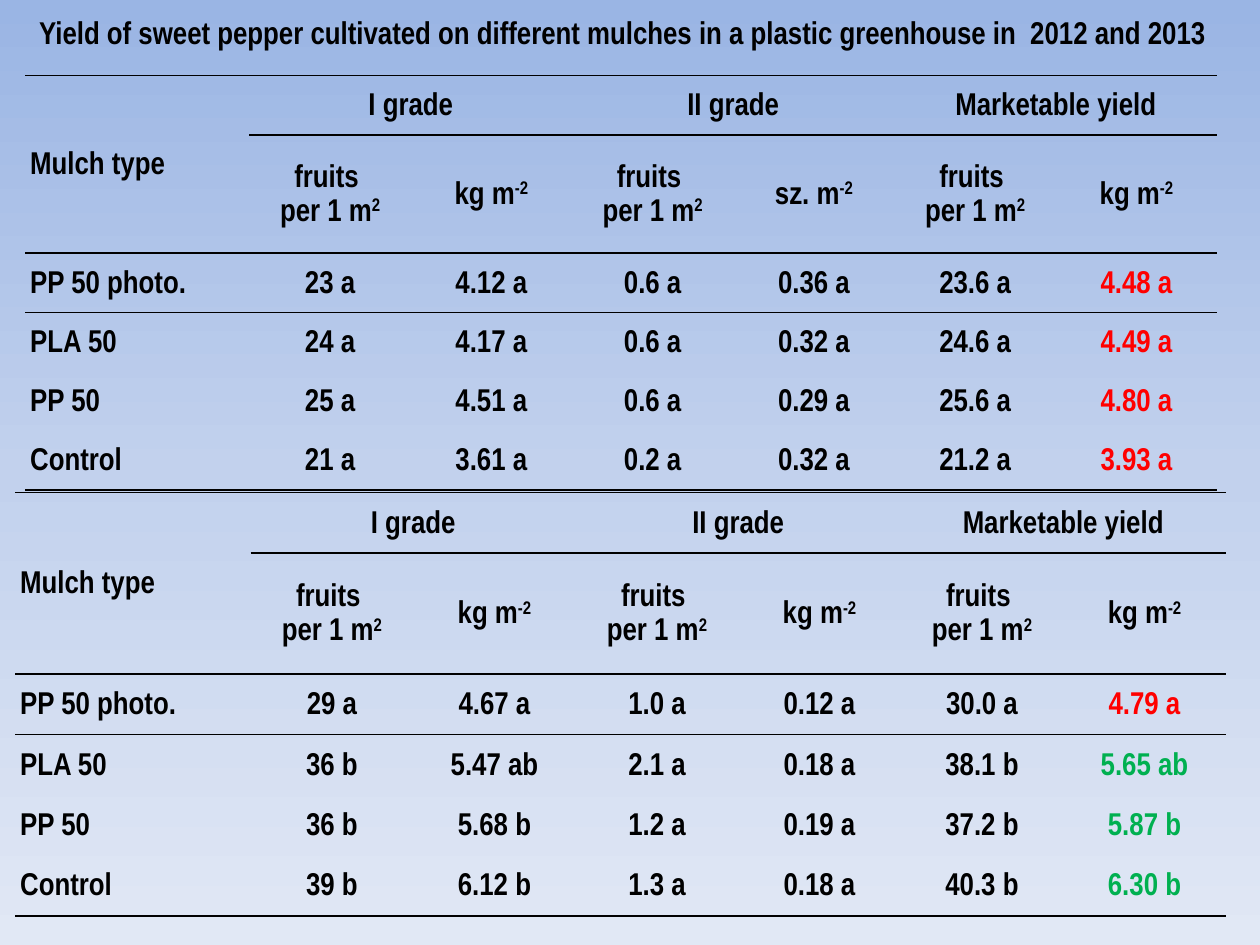
from copy import deepcopy
from dataclasses import dataclass

from lxml import etree
from pptx import Presentation
from pptx.dml.color import RGBColor
from pptx.enum.text import MSO_ANCHOR, MSO_AUTO_SIZE, PP_ALIGN
from pptx.oxml.ns import qn
from pptx.util import Inches, Pt

MIDDLE = MSO_ANCHOR.MIDDLE
FIT_SHAPE = MSO_AUTO_SIZE.SHAPE_TO_FIT_TEXT
LEFT, CENTER, JUSTIFY = PP_ALIGN.LEFT, PP_ALIGN.CENTER, PP_ALIGN.JUSTIFY

COLORS = {
    "text": "000000",
    "low": "FF0000",
    "high": "00B050",
    "sky_top": "9AB5E4",
    "sky_middle": "C2D1ED",
    "sky_bottom": "E1E8F5",
}
FONT = "Arial Narrow"
PLAIN_TABLE_STYLE = "{2D5ABB26-0587-4C30-8999-92F81FD0307C}"
GRADES = ["I grade", "II grade", "Marketable yield"]
FRUITS = "fruits \nper 1 m^2"
MASS = "kg m^-2"


@dataclass
class YieldTable:
    left: float
    top: float
    mulch_width: float
    value_width: float
    row_height: float
    units: list[str]
    rows: list[list[str]]
    yield_colors: list[str]


YIELD_2012 = YieldTable(
    0.2, 0.6, 1.78, 1.28, 0.47,
    [FRUITS, MASS, FRUITS, "sz. m^-2", FRUITS, MASS],
    [
        ["PP 50 photo.", "23 a", "4.12 a", "0.6 a", "0.36 a", "23.6 a", "4.48 a"],
        ["PLA 50", "24 a", "4.17 a", "0.6 a", "0.32 a", "24.6 a", "4.49 a"],
        ["PP 50", "25 a", "4.51 a", "0.6 a", "0.29 a", "25.6 a", "4.80 a"],
        ["Control", "21 a", "3.61 a", "0.2 a", "0.32 a", "21.2 a", "3.93 a"],
    ],
    ["low"] * 4,
)
YIELD_2013 = YieldTable(
    0.12, 3.91, 1.87, 1.29, 0.48,
    [FRUITS, MASS] * 3,
    [
        ["PP 50 photo.", "29 a", "4.67 a", "1.0 a", "0.12 a", "30.0 a", "4.79 a"],
        ["PLA 50", "36 b", "5.47 ab", "2.1 a", "0.18 a", "38.1 b", "5.65 ab"],
        ["PP 50", "36 b", "5.68 b", "1.2 a", "0.19 a", "37.2 b", "5.87 b"],
        ["Control", "39 b", "6.12 b", "1.3 a", "0.18 a", "40.3 b", "6.30 b"],
    ],
    ["low"] + ["high"] * 3,
)


def write_text(frame, text: str, align, color: str = "text") -> None:
    """Write one paragraph per line; what follows a ^ is raised."""
    for index, line in enumerate(text.split("\n")):
        paragraph = frame.add_paragraph() if index else frame.paragraphs[0]
        paragraph.alignment = align
        paragraph.font.name = FONT
        paragraph.font.size = Pt(18)
        paragraph.font.bold = True
        paragraph.font.color.rgb = RGBColor.from_string(COLORS[color])
        base, _, exponent = line.partition("^")
        paragraph.add_run().text = base
        if exponent:
            raised = paragraph.add_run()
            raised.text = exponent
            raised.font._element.set("baseline", "30000")


def fill_cell(cell, text: str, align, color: str = "text") -> None:
    cell.vertical_anchor = MIDDLE
    cell.margin_left = cell.margin_right = Inches(0.04)
    cell.margin_top = cell.margin_bottom = 0
    write_text(cell.text_frame, text, align, color)
    for paragraph in cell.text_frame.paragraphs:
        paragraph.line_spacing = 1.15


def rule_cell(cell, sides: str) -> None:
    """Draw 1 pt rules on the given sides, T before B."""
    properties = cell._tc.get_or_add_tcPr()
    for index, side in enumerate(sides):
        line = etree.Element(qn(f"a:ln{side}"), w=str(Pt(1)))
        fill = etree.SubElement(line, qn("a:solidFill"))
        etree.SubElement(fill, qn("a:srgbClr"), val=COLORS["text"])
        properties.insert(index, line)


def add_yield_table(slide, data: YieldTable) -> None:
    row_count, column_count = len(data.rows) + 2, len(data.units) + 1
    table = slide.shapes.add_table(
        row_count, column_count, Inches(data.left), Inches(data.top),
        Inches(data.mulch_width + data.value_width * len(data.units)),
        Inches(data.row_height * (row_count + 1)),
    ).table
    table.first_row = table.horz_banding = False
    table._tbl.tblPr.find(qn("a:tableStyleId")).text = PLAIN_TABLE_STYLE
    for index, column in enumerate(table.columns):
        column.width = Inches(data.value_width if index else data.mulch_width)
    for index, row in enumerate(table.rows):
        row.height = Inches(data.row_height * (2 if index == 1 else 1))

    # Two header rows
    table.cell(0, 0).merge(table.cell(1, 0))
    fill_cell(table.cell(0, 0), "Mulch type", LEFT)
    for index, grade in enumerate(GRADES):
        first = 2 * index + 1
        table.cell(0, first).merge(table.cell(0, first + 1))
        fill_cell(table.cell(0, first), grade, CENTER)
    for column, unit in enumerate(data.units, 1):
        fill_cell(table.cell(1, column), unit, CENTER)

    # Mulches and their yields
    for row, (values, yield_color) in enumerate(zip(data.rows, data.yield_colors), 2):
        for column, value in enumerate(values):
            color = yield_color if column == column_count - 1 else "text"
            fill_cell(table.cell(row, column), value, CENTER if column else LEFT, color)

    # Rules around the header rows and under the last row
    row_sides = {0: "TB", 1: "TB", 2: "T", row_count - 1: "B"}
    for row in range(row_count):
        for column in range(column_count):
            cell = table.cell(row, column)
            cell.fill.background()
            inside_mulch_header = (row, column) == (1, 0)
            rule_cell(cell, "B" if inside_mulch_header else row_sides.get(row, ""))


def paint_background(slide) -> None:
    fill = slide.background.fill
    fill.gradient()
    fill.gradient_angle = 270
    stop_list = slide.element.find(f".//{qn('a:gsLst')}")
    stop_list.insert(1, deepcopy(stop_list[0]))
    sky = ["sky_top", "sky_middle", "sky_bottom"]
    for index, (stop, name) in enumerate(zip(fill.gradient_stops, sky)):
        stop.position = index / 2
        stop.color.rgb = RGBColor.from_string(COLORS[name])


def add_title(slide, text: str) -> None:
    title = slide.shapes.title
    title.left, title.top = Inches(0.21), Inches(0.05)
    title.width, title.height = Inches(9.58), Inches(0.4)
    frame = title.text_frame
    frame.word_wrap = False
    frame.auto_size = FIT_SHAPE
    frame.vertical_anchor = MIDDLE
    write_text(frame, text, JUSTIFY)


def main() -> None:
    presentation = Presentation()
    presentation.slide_width, presentation.slide_height = Inches(10), Inches(7.5)
    slide = presentation.slides.add_slide(presentation.slide_layouts[5])
    paint_background(slide)
    add_title(
        slide,
        "Yield of sweet pepper cultivated on different mulches "
        "in a plastic greenhouse in  2012 and 2013",
    )
    for data in (YIELD_2012, YIELD_2013):
        add_yield_table(slide, data)
    presentation.save("out.pptx")


if __name__ == "__main__":
    main()
